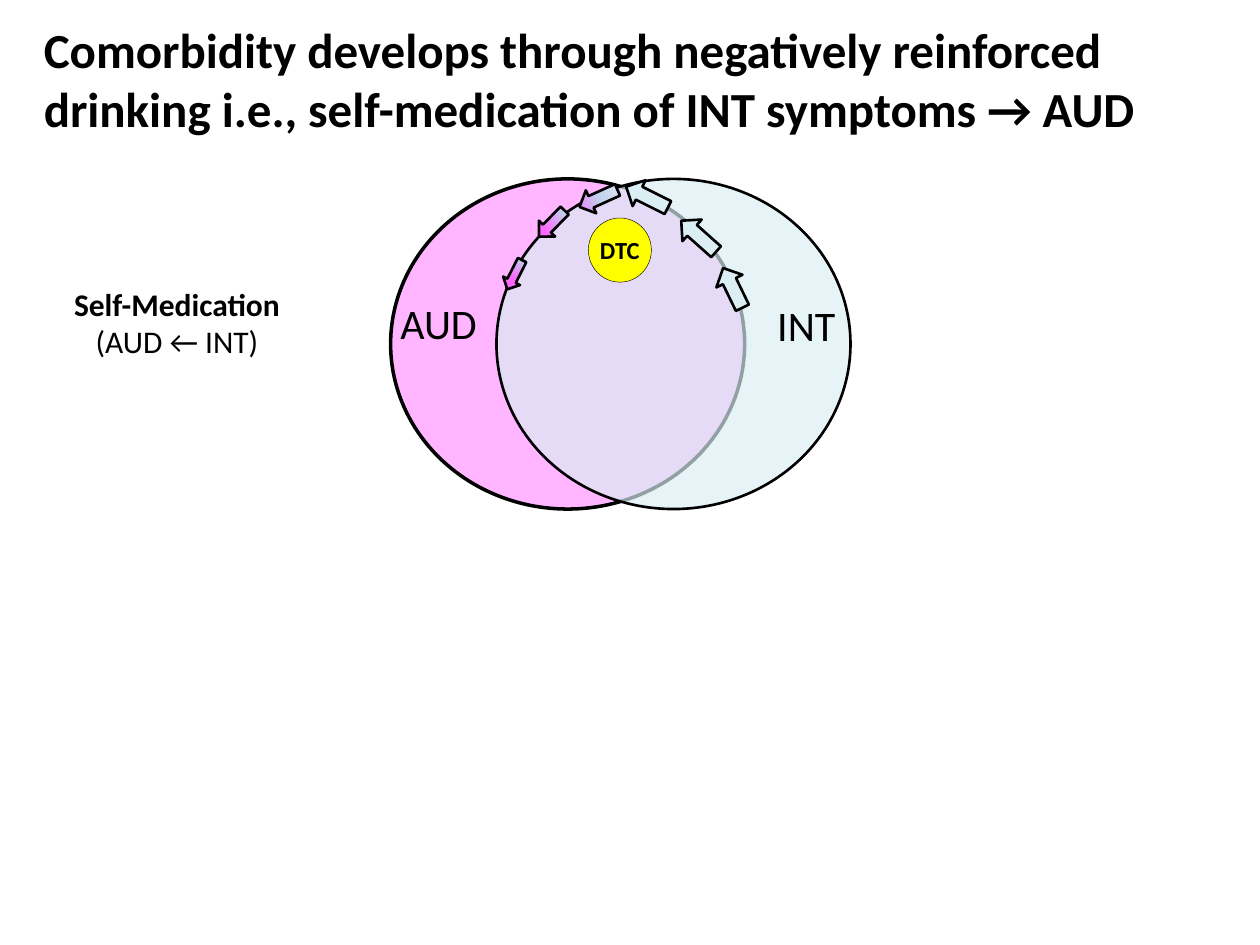
from dataclasses import dataclass

from pptx import Presentation
from pptx.dml.color import RGBColor
from pptx.enum.shapes import MSO_SHAPE
from pptx.enum.text import MSO_ANCHOR, PP_ALIGN
from pptx.oxml import parse_xml
from pptx.oxml.ns import nsdecls, qn
from pptx.util import Inches, Pt

OVAL, ARROW = MSO_SHAPE.OVAL, MSO_SHAPE.DOWN_ARROW
LEFT, CENTER = PP_ALIGN.LEFT, PP_ALIGN.CENTER
TOP, MIDDLE = MSO_ANCHOR.TOP, MSO_ANCHOR.MIDDLE
FONT = "Calibri"
COLORS = {"ink": "000000", "pink": "FF66FF", "ice": "DBEEF4",
          "yellow": "FFFF00", "pale": "E1E8F5", "blue": "C2D1ED"}
Box = tuple[float, float, float, float]


@dataclass
class Shape:
    box: Box
    kind: int
    fill: str = "ice"
    line: float = 1.5
    alpha: int = 100
    turn: float = 0
    stops: tuple[int, ...] = ()  # pale, blue and pink, in percent


@dataclass
class Run:
    text: str
    size: int
    bold: bool = False


@dataclass
class Label:
    box: Box
    runs: list[Run]  # one paragraph each
    align: int = LEFT
    anchor: int = TOP
    wrap: bool = False


def color(name: str) -> RGBColor:
    return RGBColor.from_string(COLORS[name])


def fade(shape, stops: tuple[int, ...]) -> None:
    """Fill from tail to head with a three-stop gradient."""
    marks = "".join(
        f'<a:gs pos="{pos * 1000}"><a:srgbClr val="{COLORS[name]}"/></a:gs>'
        for name, pos in zip(("pale", "blue", "pink"), stops))
    grad = parse_xml(
        f'<a:gradFill {nsdecls("a")} rotWithShape="1"><a:gsLst>{marks}</a:gsLst>'
        '<a:lin ang="5400000" scaled="0"/></a:gradFill>')
    shape._element.spPr.find(qn("a:prstGeom")).addnext(grad)


def draw(slide, item: Shape):
    shape = slide.shapes.add_shape(item.kind, *map(Inches, item.box))
    shape.shadow.inherit = False
    shape.rotation = item.turn
    if item.stops:
        fade(shape, item.stops)
    else:
        shape.fill.solid()
        shape.fill.fore_color.rgb = color(item.fill)
        if item.alpha < 100:
            tint = shape._element.spPr.find(qn("a:solidFill"))[0]
            tint.append(parse_xml(
                f'<a:alpha {nsdecls("a")} val="{item.alpha * 1000}"/>'))
    shape.line.color.rgb = color("ink")
    shape.line.width = Pt(item.line)
    return shape


def write(frame, runs: list[Run], align: int, anchor: int) -> None:
    frame.vertical_anchor = anchor
    for i, part in enumerate(runs):
        para = frame.add_paragraph() if i else frame.paragraphs[0]
        para.alignment = align
        run = para.add_run()
        run.text = part.text
        font = run.font
        font.name, font.size, font.bold = FONT, Pt(part.size), part.bold
        font.color.rgb = color("ink")


def put(slide, label: Label) -> None:
    frame = slide.shapes.add_textbox(*map(Inches, label.box)).text_frame
    frame.word_wrap = label.wrap
    write(frame, label.runs, label.align, label.anchor)


CIRCLES = [
    Shape((3.1, 1.42, 2.81, 2.62), OVAL, "pink", 2, 48),
    Shape((3.94, 1.42, 2.81, 2.62), OVAL, "ice", 1.5, 67),
]
ARROWS = [
    # Down the AUD side
    Shape((4.65, 1.41, 0.2, 0.33), ARROW, turn=65.7, stops=(0, 50, 100)),
    Shape((4.29, 1.63, 0.18, 0.29), ARROW, turn=44.4, stops=(0, 22, 68)),
    Shape((4.01, 2.05, 0.15, 0.26), ARROW, turn=26.9, stops=(0, 15, 58)),
    # Up the INT side
    Shape((5.43, 1.69, 0.23, 0.37), ARROW, turn=131.7),
    Shape((5.02, 1.38, 0.23, 0.37), ARROW, turn=116.6),
    Shape((5.7, 2.11, 0.23, 0.35), ARROW, turn=154.1),
]
NAMES = [
    Label((6.07, 2.33, 0.68, 0.5), [Run("INT", 24)]),
    Label((3.08, 2.31, 0.83, 0.5), [Run("AUD", 24)]),
]
TEXTS = [
    Label((0.25, 0, 9.5, 1.25),
          [Run("Comorbidity develops through negatively reinforced drinking "
               "i.e., self-medication of INT symptoms → AUD", 28, True)],
          anchor=MIDDLE, wrap=True),
    Label((0.48, 2.21, 1.85, 0.71),
          [Run("Self-Medication", 18, True), Run("(AUD ← INT)", 18)], CENTER),
]
BADGE = Shape((4.67, 1.73, 0.5, 0.51), OVAL, "yellow", 0.25)


def main() -> None:
    deck = Presentation()
    deck.slide_width, deck.slide_height = Inches(10), Inches(7.5)
    slide = deck.slides.add_slide(deck.slide_layouts[6])

    # Venn diagram
    for item in CIRCLES:
        draw(slide, item)
    for label in NAMES:
        put(slide, label)
    for item in ARROWS:
        draw(slide, item)

    # Title and side note
    for label in TEXTS:
        put(slide, label)

    # Badge in the overlap
    frame = draw(slide, BADGE).text_frame
    frame.margin_left = frame.margin_right = 0
    frame.margin_top = frame.margin_bottom = 0
    write(frame, [Run("DTC", 14, True)], CENTER, MIDDLE)

    deck.save("out.pptx")


if __name__ == "__main__":
    main()
